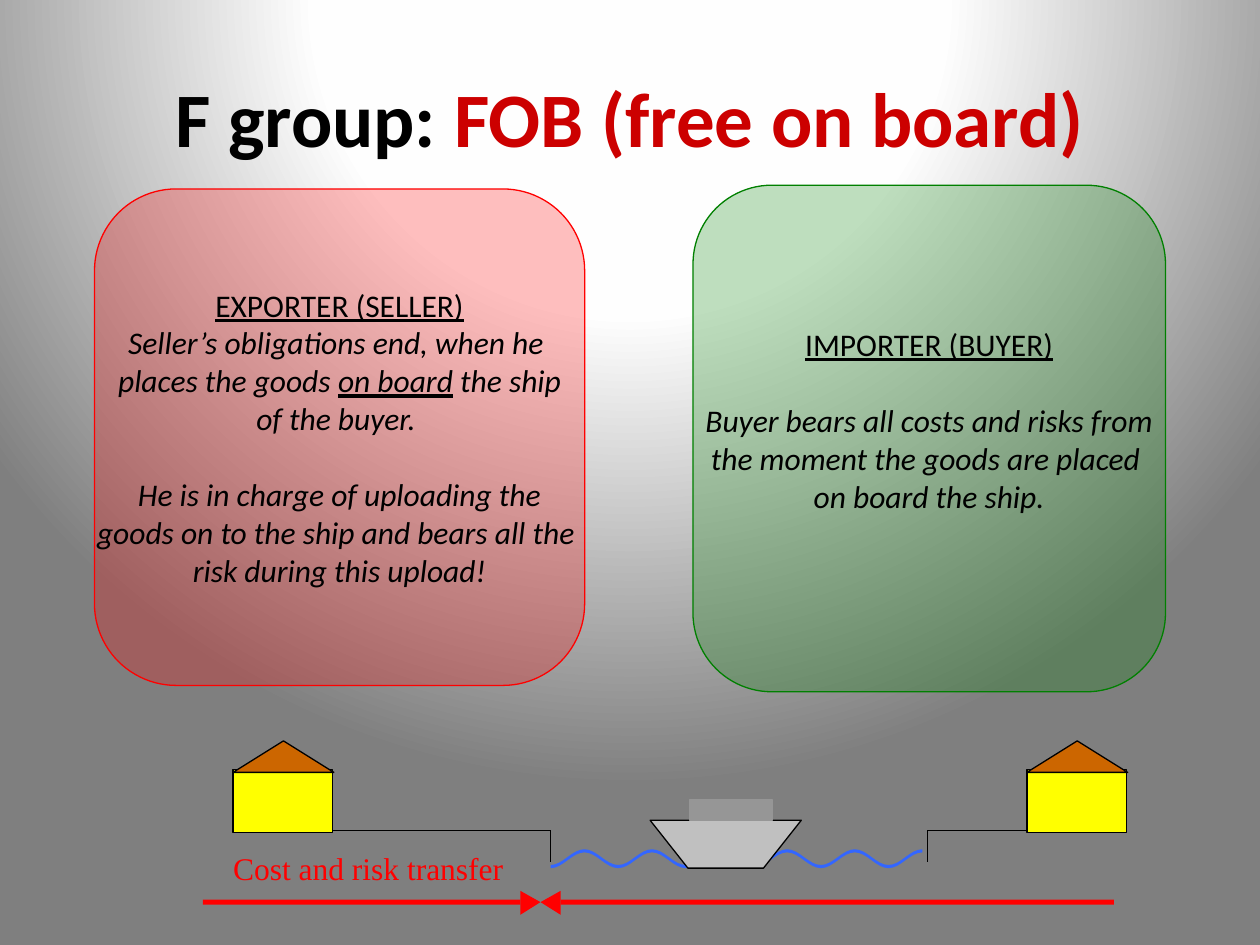
from math import cos, pi

from pptx import Presentation
from pptx.dml.color import RGBColor
from pptx.enum.shapes import MSO_CONNECTOR, MSO_SHAPE
from pptx.enum.text import MSO_ANCHOR, PP_ALIGN
from pptx.oxml import parse_xml
from pptx.oxml.ns import nsdecls
from pptx.util import Inches, Pt

COLORS = {
    "black": "000000", "title": "CC0000", "red": "FF0000", "green": "008000",
    "wall": "FFFF00", "roof": "CC6600", "water": "3366FF",
    "hull": "C0C0C0", "cabin": "969696",
}
BACKGROUND_STOPS = [(0, "FFFFFF"), (40, "FEFEFE"), (100, "7F7F7F")]

EXPORTER_LINES = [
    [("EXPORTER (SELLER)", "u")],
    [("Seller’s obligations end, when he ", "i")],
    [("places the goods ", "i"), ("on board", "iu"), (" the ship", "i")],
    [("of the buyer. ", "i")],
    [("He is in charge of uploading the", "i")],
    [("goods on to the ship and bears all the ", "i")],
    [("risk during this upload!", "i")],
]
IMPORTER_LINES = [
    [("IMPORTER (BUYER)", "u")],
    [("Buyer bears all costs and risks from", "i")],
    [("the moment the goods are placed ", "i")],
    [("on board the ship.", "i")],
]


def color(name):
    return RGBColor.from_string(COLORS[name])


def paint(shape, fill, line=None):
    shape.shadow.inherit = False
    shape.fill.solid()
    shape.fill.fore_color.rgb = color(fill)
    if line:
        shape.line.color.rgb = color(line)
        shape.line.width = Pt(0.75)
    else:
        shape.line.fill.background()
    return shape


def add_block(page, kind, box, fill, line=None):
    shape = page.shapes.add_shape(kind, *map(Inches, box))
    return paint(shape, fill, line)


def add_outline(page, points, fill, line=None):
    start, *rest = [(Inches(x), Inches(y)) for x, y in points]
    builder = page.shapes.build_freeform(*start)
    builder.add_line_segments(rest, close=True)
    return paint(builder.convert_to_shape(), fill, line)


def add_line(page, start, end):
    line = page.shapes.add_connector(
        MSO_CONNECTOR.STRAIGHT, *map(Inches, (*start, *end)))
    line.line.color.rgb = color("black")
    line.line.width = Pt(0.75)
    line._element.spPr.append(parse_xml(f"<a:effectLst {nsdecls('a')}/>"))


def add_span(para, text, font_name, size, color_name):
    span = para.add_run()
    span.text = text
    span.font.name = font_name
    span.font.size = Pt(size)
    span.font.color.rgb = color(color_name)
    return span


def set_background(page):
    """Fill the page with a circular gradient centred above its top edge."""
    fill = page.background.fill
    fill.solid()
    stops = "".join(
        f'<a:gs pos="{pos * 1000}"><a:srgbClr val="{value}"/></a:gs>'
        for pos, value in BACKGROUND_STOPS)
    gradient = parse_xml(
        f'<a:gradFill {nsdecls("a")} rotWithShape="1"><a:gsLst>{stops}</a:gsLst>'
        '<a:path path="circle"><a:fillToRect l="50000" t="-80000" r="50000" '
        'b="180000"/></a:path></a:gradFill>')
    solid = page.element.xpath(".//p:bgPr/a:solidFill")[0]
    solid.getparent().replace(solid, gradient)


def add_title(page, box):
    frame = page.shapes.add_textbox(*map(Inches, box)).text_frame
    frame.word_wrap = True
    frame.vertical_anchor = MSO_ANCHOR.MIDDLE
    para = frame.paragraphs[0]
    para.alignment = PP_ALIGN.CENTER
    for text, name in (("F group: ", "black"), ("FOB (free on board)", "title")):
        add_span(para, text, "Calibri", 44, name).font.bold = True


def add_party(page, box, name, lines, gap_line, bottom_inset=0.05):
    """Add a translucent card; the line numbered gap_line starts a new block."""
    card = add_block(page, MSO_SHAPE.ROUNDED_RECTANGLE, box, name, name)
    fill_color = card._element.spPr.xpath("./a:solidFill/a:srgbClr")[0]
    fill_color.append(parse_xml(f'<a:alpha {nsdecls("a")} val="25000"/>'))
    frame = card.text_frame
    frame.word_wrap = False
    frame.vertical_anchor = MSO_ANCHOR.MIDDLE
    frame.margin_bottom = Inches(bottom_inset)
    for number, spans in enumerate(lines):
        para = frame.add_paragraph() if number else frame.paragraphs[0]
        para.alignment = PP_ALIGN.CENTER
        if number == gap_line:
            para.space_before = Pt(22)
        for text, style in spans:
            span = add_span(para, text, "Calibri", 18, "black")
            span.font.italic = "i" in style
            span.font.underline = "u" in style


def add_house(page, box):
    left, top, width, height = box
    eaves = top + 0.25
    add_block(page, MSO_SHAPE.RECTANGLE,
              (left, top + 0.23, width - 0.01, height - 0.23), "wall", "black")
    add_outline(page, [(left + width / 2, top), (left, eaves),
                       (left + width, eaves)], "roof", "black")


def add_quay(page, house_x, edge_x, top, bottom):
    add_line(page, (house_x, top), (edge_x, top))
    add_line(page, (edge_x, top), (edge_x, bottom))


def add_water(page, box, periods=5.5, steps=88, thickness=0.025):
    """Draw a cosine ribbon that starts in a trough and ends on a crest."""
    left, top, width, height = box
    swing = (height - thickness) / 2
    upper = [(left + width * step / steps,
              top + swing * (1 + cos(2 * pi * periods * step / steps)))
             for step in range(steps + 1)]
    lower = [(x, y + thickness) for x, y in reversed(upper)]
    add_outline(page, upper + lower, "water")


def add_ship(page, box):
    left, top, width, height = box
    right, bottom, deck_y = left + width, top + height, top + 0.16
    add_outline(page, [(left, deck_y), (left + 0.3, bottom),
                       (right - 0.3, bottom), (right, deck_y)], "hull", "black")
    add_block(page, MSO_SHAPE.RECTANGLE, (left + 0.31, top, 0.66, 0.16),
              "cabin", "cabin")


def add_transfer(page, box, meeting_x):
    """Add two red arrows that meet at meeting_x, with a caption above."""
    left, top, width, height = box
    middle = top + height - 0.1
    for tail, head in ((left, meeting_x - 0.16), (left + width, meeting_x + 0.16)):
        add_block(page, MSO_SHAPE.RECTANGLE,
                  (min(tail, head), middle - 0.02, abs(head - tail), 0.04), "red")
        add_outline(page, [(head, middle - 0.09), (meeting_x, middle),
                           (head, middle + 0.1)], "red")
    frame = page.shapes.add_textbox(
        *map(Inches, (left + 0.24, top, 2.35, 0.3))).text_frame
    frame.margin_left = frame.margin_right = 0
    frame.margin_top = frame.margin_bottom = 0
    frame.word_wrap = False
    add_span(frame.paragraphs[0], "Cost and risk transfer",
             "Times New Roman", 18, "red")


def main():
    deck = Presentation()
    deck.slide_width, deck.slide_height = Inches(10), Inches(7.5)
    page = deck.slides.add_slide(deck.slide_layouts[6])
    set_background(page)
    add_title(page, (0.5, 0.3, 9, 1.25))
    add_water(page, (4.37, 6.74, 2.95, 0.15))
    for house_left, house_x, edge_x in ((1.85, 2.64, 4.37), (8.15, 8.15, 7.36)):
        add_house(page, (house_left, 5.88, 0.8, 0.73))
        add_quay(page, house_x, edge_x, 6.59, 6.84)
    add_transfer(page, (1.61, 6.74, 7.23, 0.52), 4.29)
    add_ship(page, (5.16, 6.35, 1.2, 0.54))
    add_party(page, (0.75, 1.5, 3.89, 3.94), "red", EXPORTER_LINES, 4)
    add_party(page, (5.5, 1.47, 3.75, 4.02), "green", IMPORTER_LINES, 1, 0.35)
    deck.save("out.pptx")


if __name__ == "__main__":
    main()
